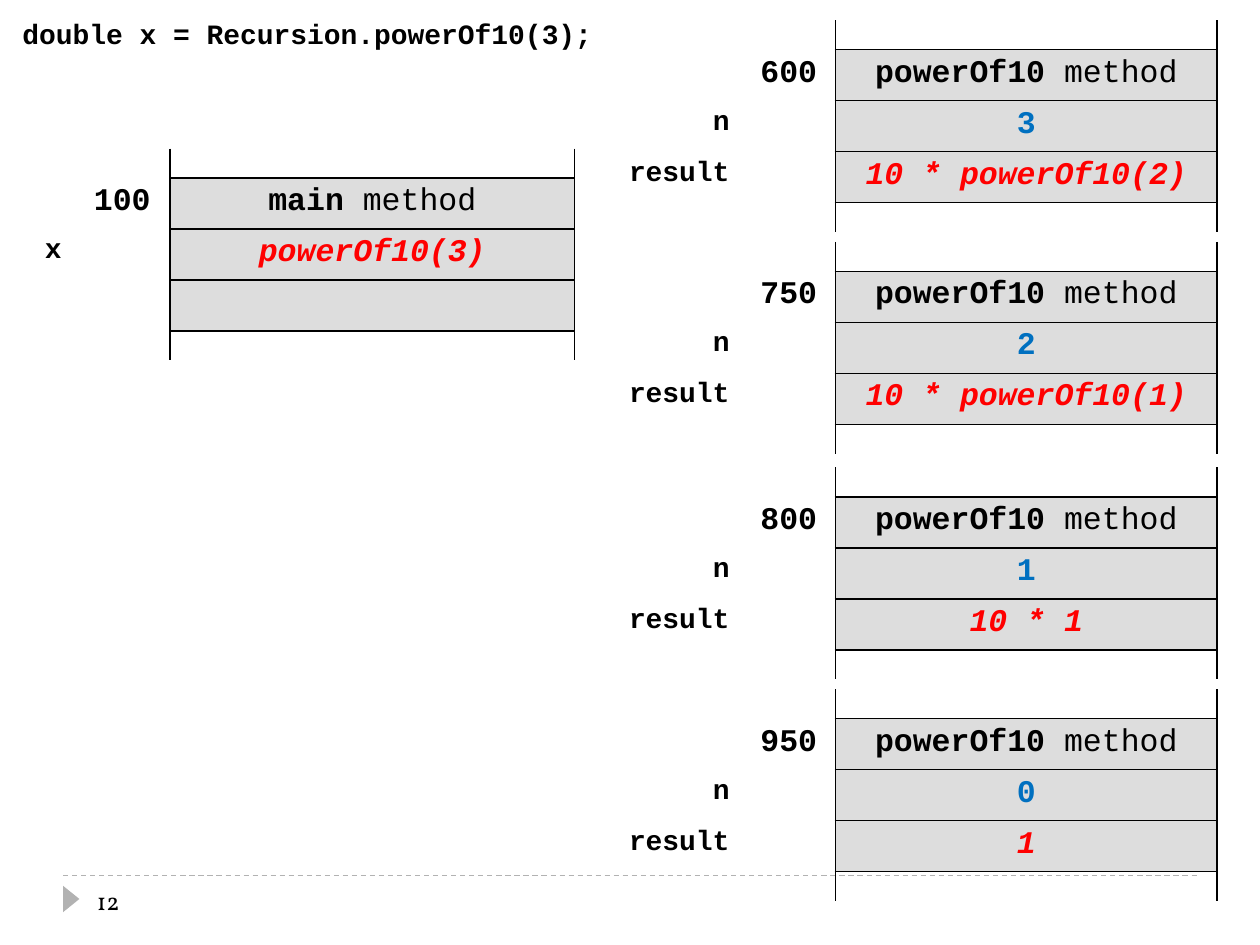
"""Build a slide showing the stack frames of a recursive powerOf10 call."""
from lxml.etree import SubElement
from pptx import Presentation
from pptx.dml.color import RGBColor
from pptx.enum.dml import MSO_LINE
from pptx.enum.shapes import MSO_CONNECTOR, MSO_SHAPE
from pptx.enum.text import MSO_ANCHOR, PP_ALIGN
from pptx.oxml.ns import qn
from pptx.util import Inches, Pt

BLACK = RGBColor(0x00, 0x00, 0x00)
BLUE = RGBColor(0x00, 0x70, 0xC0)
RED = RGBColor(0xFF, 0x00, 0x00)
CELL_GRAY = RGBColor(0xDD, 0xDD, 0xDD)
RULE_GRAY = RGBColor(0xB2, 0xB2, 0xB2)
MONO = "Courier New"
NO_STYLE = "{2D5ABB26-0587-4C30-8999-92F81FD0307C}"

CODE = "double x = Recursion.powerOf10(3);"
PAGE_NUMBER = "12"
CALLS = [
    (0.16, "600", "3", "10 * powerOf10(2)"),
    (1.92, "750", "2", "10 * powerOf10(1)"),
    (3.71, "800", "1", "10 * 1"),
    (5.47, "950", "0", "1"),
]
MAIN_ROWS = [("x", "powerOf10(3)", RED)]
ROW_HEIGHTS = [0.23, 0.405, 0.405, 0.405, 0.23]
CALL_COLS = [1.17, 0.74, 3.03]
MAIN_COLS = [0.53, 0.76, 3.21]


def add_text(tf, text, size=18, font=MONO, color=BLACK, bold=True,
             italic=False, align=PP_ALIGN.LEFT):
    p = tf.paragraphs[0]
    p.alignment = align
    r = p.add_run()
    r.text = text
    r.font.size = Pt(size)
    r.font.name = font
    r.font.color.rgb = color
    r.font.bold = bold
    r.font.italic = italic


def add_box(s, left, top, width, height, text, wrap=True,
            anchor=MSO_ANCHOR.TOP, **fmt):
    tf = s.shapes.add_textbox(*map(Inches, (left, top, width, height))).text_frame
    tf.word_wrap = wrap
    tf.vertical_anchor = anchor
    add_text(tf, text, **fmt)


def set_borders(cell, sides):
    tc_pr = cell._tc.get_or_add_tcPr()
    for side in "LRTB":
        ln = SubElement(tc_pr, qn(f"a:ln{side}"), w=str(Pt(1)))
        if side in sides:
            fill = SubElement(ln, qn("a:solidFill"))
            SubElement(fill, qn("a:srgbClr"), val=str(BLACK))
        else:
            SubElement(ln, qn("a:noFill"))


def style_cell(cell, row, col):
    last = len(ROW_HEIGHTS) - 1
    if col == 2:
        set_borders(cell, {0: "LRB", last: "LRT"}.get(row, "LRTB"))
    else:
        set_borders(cell, "R" if col == 1 else "")
    if col == 2 and 0 < row < last:
        cell.fill.solid()
        cell.fill.fore_color.rgb = CELL_GRAY
    else:
        cell.fill.background()
    if not cell.text_frame.text:
        end = cell.text_frame.paragraphs[0]._p.get_or_add_endParaRPr()
        end.set("sz", "800")


def add_frame(s, left, top, cols, address, method, variables):
    shape = s.shapes.add_table(len(ROW_HEIGHTS), len(cols), Inches(left), Inches(top),
                               Inches(sum(cols)), Inches(sum(ROW_HEIGHTS)))
    table = shape.table
    table.first_row = table.horz_banding = False
    table._tbl.tblPr.find(qn("a:tableStyleId")).text = NO_STYLE
    for column, width in zip(table.columns, cols):
        column.width = Inches(width)
    for row, height in zip(table.rows, ROW_HEIGHTS):
        row.height = Inches(height)

    add_text(table.cell(1, 1).text_frame, address, align=PP_ALIGN.CENTER)
    heading = table.cell(1, 2).text_frame
    add_text(heading, method + " ", align=PP_ALIGN.CENTER)
    add_text(heading, "method", bold=False, align=PP_ALIGN.CENTER)
    for i, (name, value, color) in enumerate(variables, start=2):
        add_text(table.cell(i, 0).text_frame, name, size=16, align=PP_ALIGN.RIGHT)
        add_text(table.cell(i, 2).text_frame, value, color=color,
                 italic=color == RED, align=PP_ALIGN.CENTER)
    for i in range(len(ROW_HEIGHTS)):
        for j in range(len(cols)):
            style_cell(table.cell(i, j), i, j)


def add_footer(s):
    rule = s.shapes.add_connector(MSO_CONNECTOR.STRAIGHT, Inches(0.5), Inches(6.95),
                                  Inches(9.5), Inches(6.95))
    rule.line.color.rgb = RULE_GRAY
    rule.line.width = Pt(0.75)
    rule.line.dash_style = MSO_LINE.DASH
    SubElement(rule._element.spPr, qn("a:effectLst"))
    sp = s.shapes.add_shape(MSO_SHAPE.ISOSCELES_TRIANGLE, Inches(0.46), Inches(7.07),
                            Inches(0.21), Inches(0.13))
    sp.rotation = 90
    sp.shadow.inherit = False
    sp.fill.solid()
    sp.fill.fore_color.rgb = RULE_GRAY
    sp.line.fill.background()
    add_box(s, 0.67, 6.95, 2.17, 0.4, PAGE_NUMBER, anchor=MSO_ANCHOR.MIDDLE,
            size=14, font="Vollkorn", bold=False)


def main():
    prs = Presentation()
    prs.slide_width, prs.slide_height = Inches(10), Inches(7.5)
    s = prs.slides.add_slide(prs.slide_layouts[6])
    add_footer(s)
    for top, address, n, result in CALLS:
        add_frame(s, 4.72, top, CALL_COLS, address, "powerOf10",
                  [("n", n, BLUE), ("result", result, RED)])
    add_frame(s, 0.06, 1.18, MAIN_COLS, "100", "main", MAIN_ROWS)
    add_box(s, 0.08, 0.08, 4.79, 0.37, CODE, wrap=False, size=16)
    prs.save("out.pptx")


if __name__ == "__main__":
    main()
